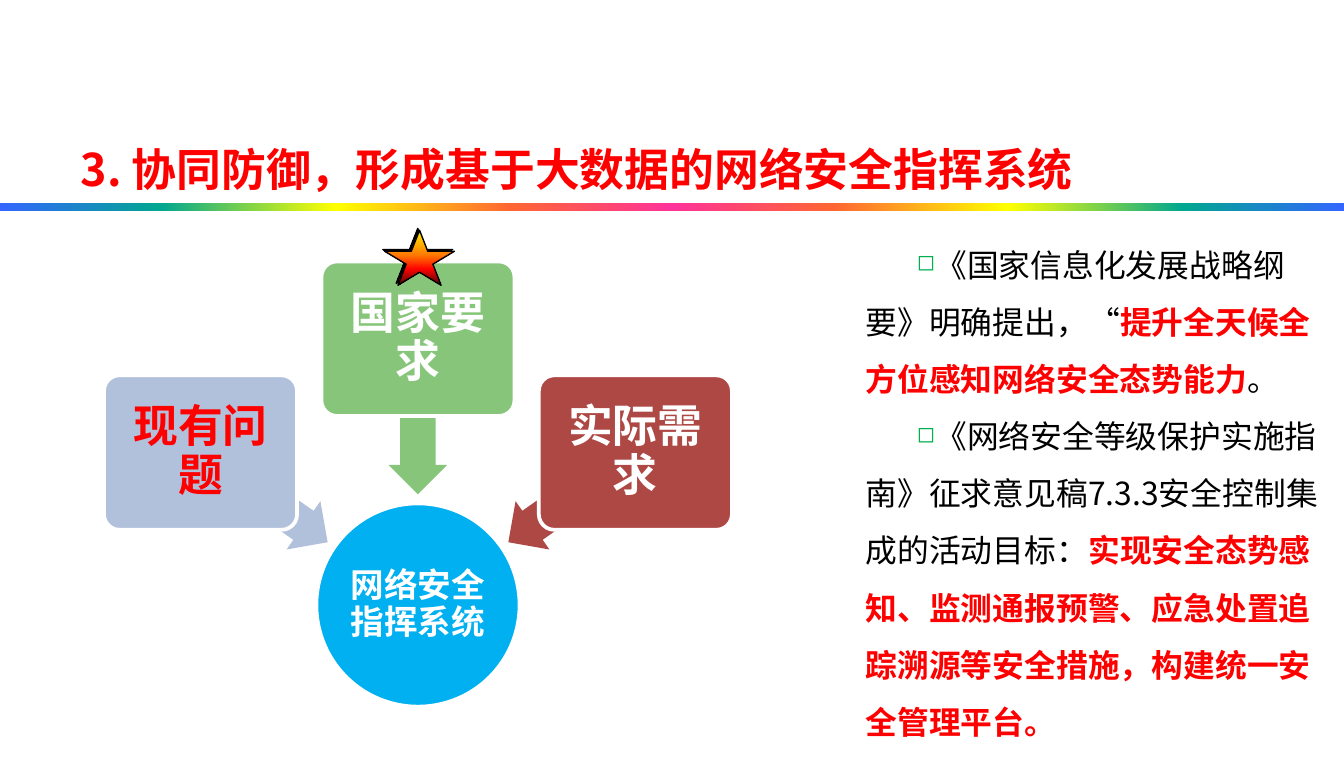
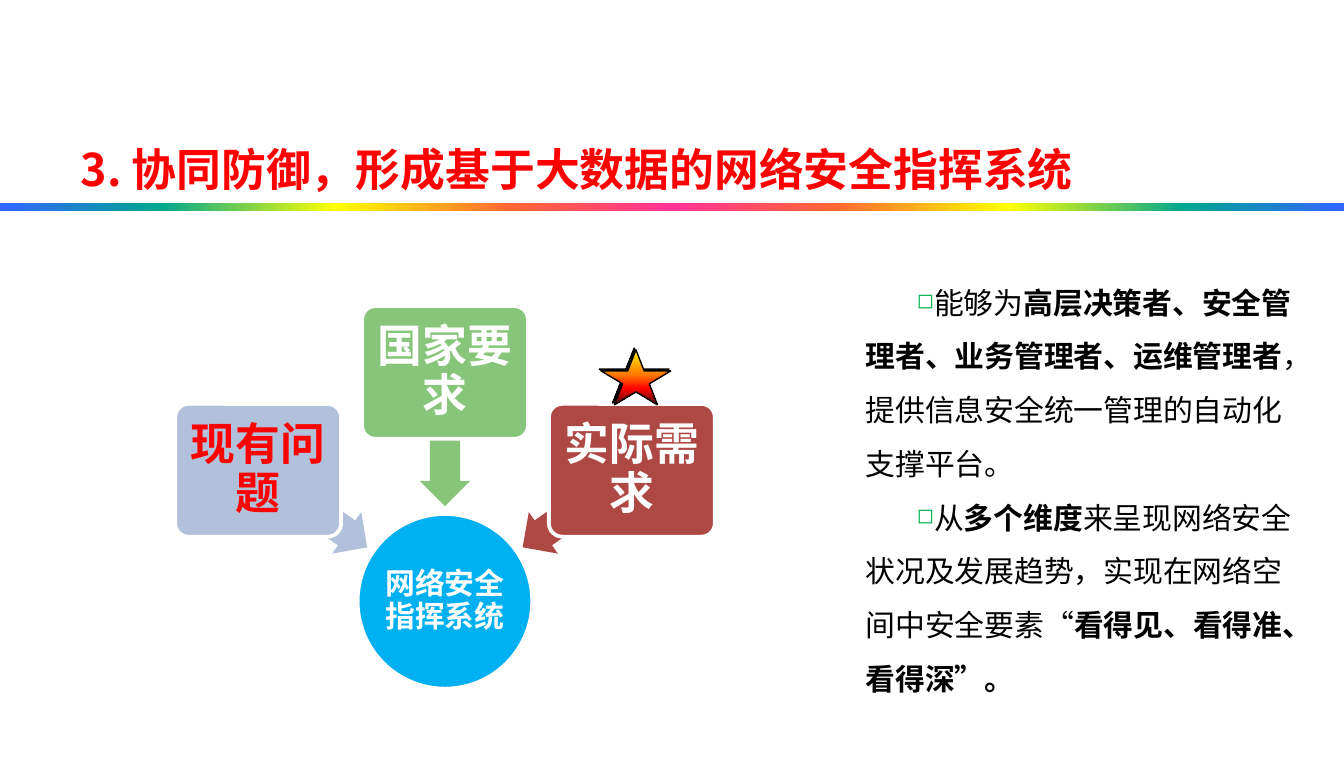
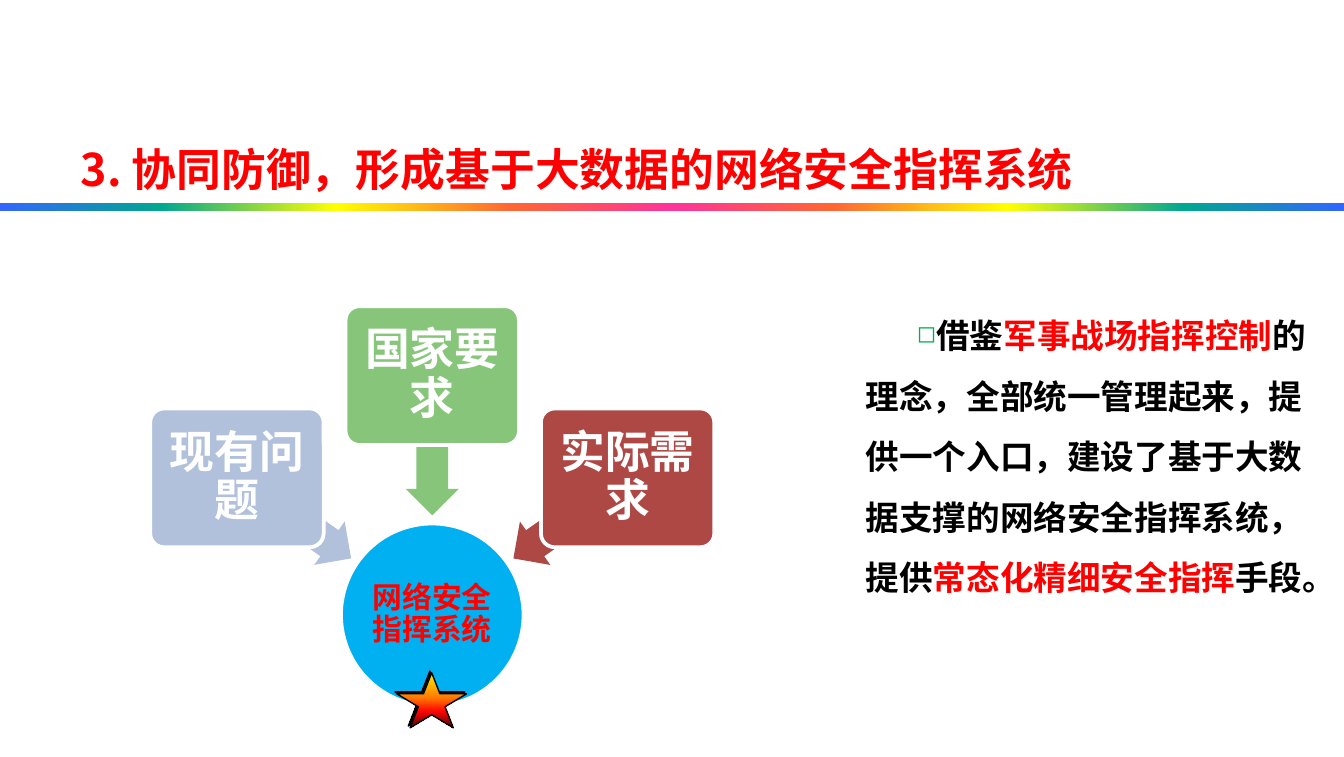
from dataclasses import dataclass

from lxml import etree
from pptx import Presentation
from pptx.dml.color import RGBColor
from pptx.enum.shapes import MSO_SHAPE
from pptx.enum.text import MSO_ANCHOR, MSO_AUTO_SIZE, PP_ALIGN
from pptx.oxml.ns import qn
from pptx.util import Cm, Pt

CIRCLE, BOX = MSO_SHAPE.OVAL, MSO_SHAPE.ROUNDED_RECTANGLE
ARROW, STAR, BAND = MSO_SHAPE.LEFT_ARROW, MSO_SHAPE.STAR_5_POINT, MSO_SHAPE.RECTANGLE
CENTER, LEFT = PP_ALIGN.CENTER, PP_ALIGN.LEFT
MIDDLE, NO_FIT = MSO_ANCHOR.MIDDLE, MSO_AUTO_SIZE.NONE
TITLE_ONLY = 5


@dataclass(frozen=True)
class Theme:
    font: str = "Noto Sans CJK SC"
    black: str = "000000"
    white: str = "FFFFFF"
    red: str = "FF0000"
    bullet: str = "00B050"
    hub: str = "00B0F0"
    heading_size: int = 24
    rainbow: tuple = ((0, "3366FF"), (12, "01A78F"), (25, "FFFF00"),
                      (38, "FF6633"), (50, "FF3399"), (62, "FF6633"),
                      (75, "FFFF00"), (88, "01A78F"), (100, "3366FF"))
    flame: tuple = ((0, "FFF200"), (45, "FF7A00"), (70, "FF0300"), (100, "4D0808"))


THEME = Theme()

# Text styles: colour and bold
PLAIN = (THEME.black, False)
STRONG = (THEME.black, True)
ALERT = (THEME.red, True)

# Content (lengths in centimetres)
PAGE_WIDTH, PAGE_HEIGHT = 25.4, 14.3
TITLE = "3. 协同防御，形成基于大数据的网络安全指挥系统"
HUB = "网络安全指挥系统"

# Sources around the hub. Centre x, top, arrow x and arrow y are in hub
# diameters, measured from the top middle of the hub.
SOURCES = [
    ("现有问题", "B2C1DB", -1.07, -0.63, -0.76, -0.03, 215),
    ("国家要求", "87C67A", 0, -1.19, 0, -0.43, 270),
    ("实际需求", "AE4845", 1.07, -0.63, 0.76, -0.03, 325),
]
BOX_SIZE = (0.95, 0.76)
ARROW_SIZE = (0.77, 0.29)

SLIDES = [
    {
        "hub": (7.9, 9.51, 3.84), "hub_size": 18, "red_label": "现有问题",
        "star": (7.27, 4.35),
        "body": (15, 4.15, 10.31, 9.73), "body_size": 17,
        "points": [
            [("《国家信息化发展战略纲要》明确提出，“", PLAIN),
             ("提升全天候全方位感知网络安全态势能力", ALERT),
             ("。", PLAIN)],
            [("《网络安全等级保护实施指南》征求意见稿7.3.3安全控制集成的活动目标：", PLAIN),
             ("实现安全态势感知、监测通报预警、应急处置追踪溯源等安全措施，构建统一安全管理平台。", ALERT)],
        ],
    },
    {
        "hub": (8.41, 9.71, 3.3), "hub_size": 16, "red_label": "现有问题",
        "star": (11.36, 6.61),
        "body": (15, 4.91, 9.96, 9.73), "body_size": 16,
        "points": [
            [("能够为", PLAIN),
             ("高层决策者、安全管理者、业务管理者、运维管理者", STRONG),
             ("，提供信息安全统一管理的自动化支撑平台。", PLAIN)],
            [("从", PLAIN),
             ("多个维度", STRONG),
             ("来呈现网络安全状况及发展趋势，实现在网络空间中安全要素“", PLAIN),
             ("看得见、看得准、看得深”。", STRONG)],
        ],
    },
    {
        "hub": (8.17, 9.89, 3.45), "hub_size": 16, "red_label": HUB,
        "star": (7.5, 12.71),
        "body": (15, 5.45, 10.31, 7.47), "body_size": 18,
        "points": [
            [("借鉴", STRONG),
             ("军事战场指挥控制", ALERT),
             ("的理念，全部统一管理起来，提供一个入口，建设了基于大数据支撑的网络安全指挥系统，提供", STRONG),
             ("常态化精细安全指挥", ALERT),
             ("手段。", STRONG)],
        ],
    },
]


# Formatting helpers
def style_span(span, size, color, bold):
    span.font.size = Pt(size)
    span.font.bold = bold
    span.font.color.rgb = RGBColor.from_string(color)
    span.font.name = THEME.font
    latin = span.font._element.find(qn("a:latin"))
    east_asian = etree.Element(qn("a:ea"), typeface=THEME.font)
    latin.addnext(east_asian)


def add_shape(page, kind, left, top, width, height, fill=None):
    shape = page.shapes.add_shape(kind, Cm(left), Cm(top), Cm(width), Cm(height))
    shape.shadow.inherit = False
    shape.line.fill.background()
    if fill:
        shape.fill.solid()
        shape.fill.fore_color.rgb = RGBColor.from_string(fill)
    return shape


def set_outline(shape, color, width):
    shape.line.color.rgb = RGBColor.from_string(color)
    shape.line.width = Pt(width)


def set_gradient(shape, stops, angle):
    shape.fill.gradient()
    shape.fill.gradient_angle = angle
    stop_list = shape._element.spPr.find(qn("a:gradFill")).find(qn("a:gsLst"))
    for old_stop in list(stop_list):
        stop_list.remove(old_stop)
    for position, color in stops:
        stop = etree.SubElement(stop_list, qn("a:gs"), pos=str(position * 1000))
        etree.SubElement(stop, qn("a:srgbClr"), val=color)


def set_label(shape, text, size, color, inset):
    frame = shape.text_frame
    frame.word_wrap = True
    frame.vertical_anchor = MIDDLE
    frame.margin_left = frame.margin_right = Cm(inset)
    frame.margin_top = frame.margin_bottom = Cm(inset)
    frame.text = text
    para = frame.paragraphs[0]
    para.alignment = CENTER
    para.line_spacing = 0.9
    style_span(para.runs[0], size, color, True)


def set_bullet(para):
    props = para._p.get_or_add_pPr()
    props.set("marL", str(Cm(1.11)))
    props.set("indent", str(Cm(0.97)))
    bullet_color = etree.SubElement(props, qn("a:buClr"))
    etree.SubElement(bullet_color, qn("a:srgbClr"), val=THEME.bullet)
    etree.SubElement(props, qn("a:buSzPct"), val="70000")
    etree.SubElement(props, qn("a:buChar"), char="◻")


# Parts of a slide
def add_heading(page):
    title = page.shapes.title
    title.left, title.top, title.width, title.height = Cm(1.27), Cm(2.41), Cm(22.86), Cm(1.55)
    frame = title.text_frame
    frame.text = TITLE
    frame.auto_size = NO_FIT
    frame.vertical_anchor = MIDDLE
    frame.paragraphs[0].alignment = LEFT
    style_span(frame.paragraphs[0].runs[0], THEME.heading_size, THEME.red, True)
    band = add_shape(page, BAND, 0, 3.84, PAGE_WIDTH, 0.15)
    set_gradient(band, THEME.rainbow, 0)


def add_diagram(page, content):
    middle, hub_top, diameter = content["hub"]

    def label_color(text):
        return THEME.red if text == content["red_label"] else THEME.white

    hub = add_shape(page, CIRCLE, middle - diameter / 2, hub_top,
                    diameter, diameter, THEME.hub)
    set_outline(hub, THEME.white, 2)
    set_label(hub, HUB, content["hub_size"], label_color(HUB), 0.03)

    box_width, box_height = (diameter * part for part in BOX_SIZE)
    arrow_width, arrow_height = (diameter * part for part in ARROW_SIZE)
    for text, color, box_x, box_top, arrow_x, arrow_y, turn in SOURCES:
        arrow = add_shape(page, ARROW,
                          middle + arrow_x * diameter - arrow_width / 2,
                          hub_top + arrow_y * diameter - arrow_height / 2,
                          arrow_width, arrow_height, color)
        arrow.adjustments[0], arrow.adjustments[1] = 0.6, 0.5
        arrow.rotation = turn
        box = add_shape(page, BOX, middle + box_x * diameter - box_width / 2,
                        hub_top + box_top * diameter, box_width, box_height, color)
        box.adjustments[0] = 0.1
        set_outline(box, THEME.white, 2)
        set_label(box, text, THEME.heading_size, label_color(text), 0.13)


def add_points(page, content):
    box = page.shapes.add_textbox(*(Cm(length) for length in content["body"]))
    frame = box.text_frame
    frame.word_wrap = True
    for index, point in enumerate(content["points"]):
        para = frame.add_paragraph() if index else frame.paragraphs[0]
        para.level = 2
        para.line_spacing = 1.5
        set_bullet(para)
        for text, style in point:
            span = para.add_run()
            span.text = text
            style_span(span, content["body_size"], *style)


def add_star(page, left, top):
    star = add_shape(page, STAR, left, top, 1.32, 1.04)
    set_gradient(star, THEME.flame, 270)
    set_outline(star, THEME.black, 0.75)
    effects = star._element.spPr.find(qn("a:effectLst"))
    shadow = etree.SubElement(effects, qn("a:outerShdw"), blurRad="0",
                              dist=str(Pt(1.4)), dir=str(225 * 60000))
    etree.SubElement(shadow, qn("a:srgbClr"), val=THEME.black)


def main():
    deck = Presentation()
    deck.slide_width, deck.slide_height = Cm(PAGE_WIDTH), Cm(PAGE_HEIGHT)
    for content in SLIDES:
        page = deck.slides.add_slide(deck.slide_layouts[TITLE_ONLY])
        add_heading(page)
        add_diagram(page, content)
        add_points(page, content)
        add_star(page, *content["star"])
    deck.save("out.pptx")


if __name__ == "__main__":
    main()
